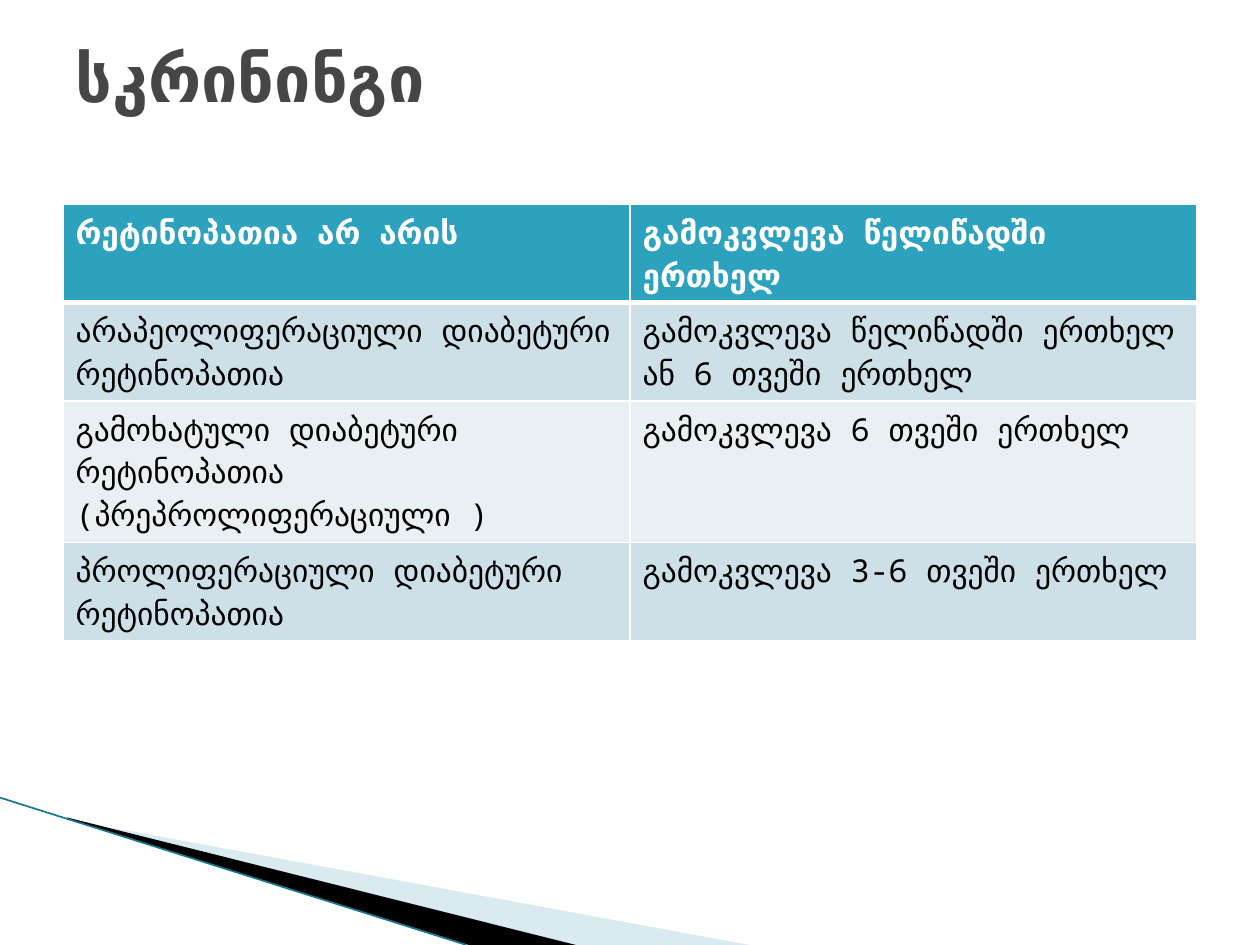
import lxml.etree
import pptx
import pptx.dml.color
import pptx.enum.shapes
import pptx.enum.text
import pptx.oxml
import pptx.oxml.ns
import pptx.util
from pptx.util import Cm

RGB = pptx.dml.color.RGBColor
WHITE = RGB(0xFF, 0xFF, 0xFF)
BLACK = RGB(0x00, 0x00, 0x00)
GREY = RGB(0x46, 0x46, 0x46)
TEAL = RGB(0x2D, 0xA2, 0xBF)
DARK_TEAL = RGB(0x16, 0x78, 0x8F)
PALE_BLUE = RGB(0xA0, 0xCB, 0xDC)
BAND_DARK = RGB(0xCD, 0xE0, 0xE8)
BAND_LIGHT = RGB(0xE8, 0xF0, 0xF4)
FONT = "Noto Sans Mono"

ROWS = [
    ("რეტინოპათია არ არის", "გამოკვლევა წელიწადში ერთხელ"),
    ("არაპეოლიფერაციული დიაბეტური რეტინოპათია",
     "გამოკვლევა წელიწადში ერთხელ ან 6 თვეში ერთხელ"),
    ("გამოხატული დიაბეტური რეტინოპათია (პრეპროლიფერაციული )",
     "გამოკვლევა 6 თვეში ერთხელ"),
    ("პროლიფერაციული დიაბეტური რეტინოპათია",
     "გამოკვლევა 3-6 თვეში ერთხელ"),
]


def set_font(p, size, color, bold):
    p.font.name = FONT
    p.font.size = pptx.util.Pt(size)
    p.font.bold = bold
    p.font.color.rgb = color


def add_wedge(slide, left, top, points, color, alpha=None):
    x0, y0 = points[0]
    builder = slide.shapes.build_freeform(Cm(left + x0), Cm(top + y0))
    builder.add_line_segments([(Cm(left + x), Cm(top + y)) for x, y in points[1:]])
    sp = builder.convert_to_shape()
    sp.shadow.inherit = False
    sp.line.fill.background()
    sp.fill.solid()
    sp.fill.fore_color.rgb = color
    if alpha:
        clr = sp.fill._xPr.find(".//" + pptx.oxml.ns.qn("a:srgbClr"))
        lxml.etree.SubElement(clr, pptx.oxml.ns.qn("a:alpha"), val=str(alpha * 1000))


def add_corner(slide, left, top, width, height):
    add_wedge(slide, left, top,
              [(1.4, 0.45), (15.11, height), (11.58, height), (1.4, 0.43)],
              PALE_BLUE, 40)
    add_wedge(slide, left, top,
              [(1.35, 0.4), (11.61, height), (9.45, height), (1.37, 0.43)],
              BLACK)
    line = slide.shapes.add_connector(
        pptx.enum.shapes.MSO_CONNECTOR.STRAIGHT,
        Cm(left), Cm(top), Cm(left + width), Cm(top + height))
    line.line.color.rgb = DARK_TEAL
    line.line.width = pptx.util.Pt(0.95)
    lxml.etree.SubElement(line._element.spPr, pptx.oxml.ns.qn("a:effectLst"))


def add_title(slide, left, top, width, height):
    title = slide.shapes.title
    title.left, title.top = Cm(left), Cm(top)
    title.width, title.height = Cm(width), Cm(height)
    tf = title.text_frame
    tf.text = "სკრინინგი"
    tf.margin_top = 0
    tf.vertical_anchor = pptx.enum.text.MSO_ANCHOR.TOP
    p = tf.paragraphs[0]
    p.alignment = pptx.enum.text.PP_ALIGN.LEFT
    set_font(p, 36.9, GREY, True)


def set_borders(cell, header):
    tcPr = cell._tc.get_or_add_tcPr()
    for i, side in enumerate(("lnL", "lnR", "lnT", "lnB")):
        width = pptx.util.Pt(3 if header and side == "lnB" else 1)
        ln = pptx.oxml.parse_xml(
            f'<a:{side} {pptx.oxml.ns.nsdecls("a")} w="{width}"><a:solidFill>'
            f'<a:srgbClr val="{WHITE}"/></a:solidFill></a:{side}>')
        tcPr.insert(i, ln)


def add_screening_table(slide, left, top, width, row_height):
    table = slide.shapes.add_table(
        len(ROWS), 2, Cm(left), Cm(top), Cm(width), Cm(row_height * len(ROWS))).table
    for i, row in enumerate(ROWS):
        header = i == 0
        fill = TEAL if header else BAND_DARK if i % 2 else BAND_LIGHT
        for j, text in enumerate(row):
            cell = table.cell(i, j)
            cell.text = text
            cell.fill.solid()
            cell.fill.fore_color.rgb = fill
            set_font(cell.text_frame.paragraphs[0], 18, WHITE if header else BLACK, header)
            if header or i > 1:
                set_borders(cell, header)
            else:
                set_borders(cell, False)
                top_line = cell._tc.tcPr.find(pptx.oxml.ns.qn("a:lnT"))
                top_line.set("w", str(pptx.util.Pt(3)))


def main():
    prs = pptx.Presentation()
    prs.slide_width, prs.slide_height = Cm(25.4), Cm(19.05)
    slide = prs.slides.add_slide(prs.slide_layouts[5])
    add_corner(slide, 0, 16.08, 9.4, 2.97)
    add_screening_table(slide, 1.27, 4.12, 22.86, 1.04)
    add_title(slide, 1.27, 0.76, 22.86, 3.18)
    prs.save("out.pptx")


if __name__ == "__main__":
    main()
